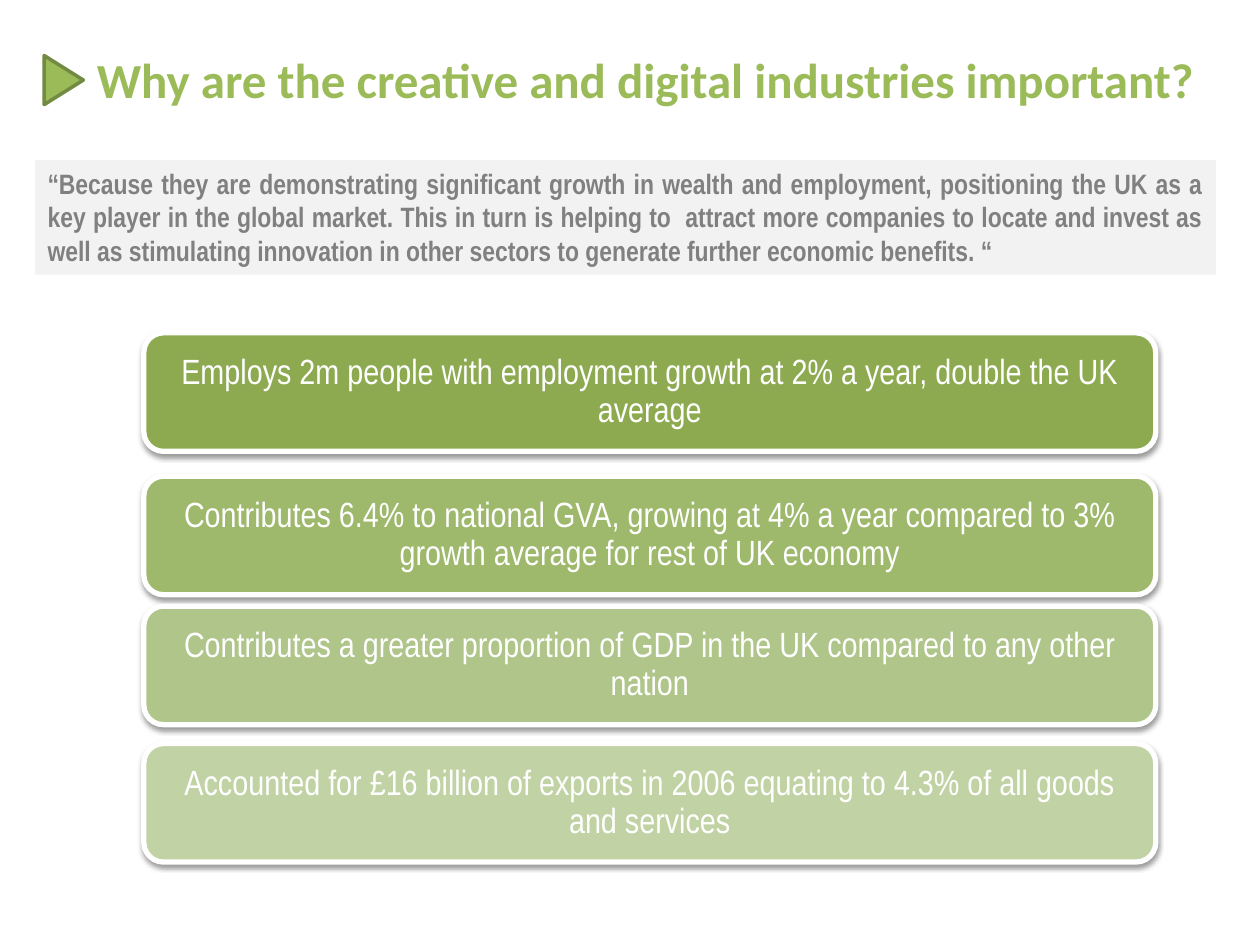
from lxml import etree
from pptx import Presentation
from pptx.dml.color import RGBColor
from pptx.enum.shapes import MSO_SHAPE
from pptx.enum.text import MSO_ANCHOR, PP_ALIGN
from pptx.oxml.ns import qn
from pptx.util import Cm, Pt

RECTANGLE = MSO_SHAPE.RECTANGLE
ROUNDED = MSO_SHAPE.ROUNDED_RECTANGLE
TRIANGLE = MSO_SHAPE.ISOSCELES_TRIANGLE
TOP, MIDDLE = MSO_ANCHOR.TOP, MSO_ANCHOR.MIDDLE
LEFT, CENTER, JUSTIFY = PP_ALIGN.LEFT, PP_ALIGN.CENTER, PP_ALIGN.JUSTIFY

QUOTE = (
    "“Because they are demonstrating significant growth in wealth and employment, "
    "positioning the UK as a key player in the global market. This in turn is helping to  "
    "attract more companies to locate and invest as well as stimulating innovation in "
    "other sectors to generate further economic benefits. “"
)
# Top edge in cm, fill, statement
REASONS = [
    (6.71, "8DAA51", "Employs 2m people with employment growth at 2% a year, "
                     "double the UK average"),
    (9.6, "9EB86C", "Contributes 6.4% to national GVA, growing at 4% a year "
                    "compared to 3% growth average for rest of UK economy"),
    (12.22, "AFC589", "Contributes a greater proportion of GDP in the UK "
                      "compared to any other nation"),
    (14.99, "C1D3A5", "Accounted for £16 billion of exports in 2006 equating "
                      "to 4.3% of all goods and services"),
]


def rgb(value):
    return RGBColor.from_string(value)


class SlideBuilder:
    accent, accent_edge = "9BBB59", "738A42"
    white, panel, grey = "FFFFFF", "F2F2F2", "808080"
    heading_font, body_font = "Calibri", "Arial Narrow"

    def __init__(self, slide):
        self.slide = slide

    def set_text(self, shape, text, font, size, color, align, anchor, bold=False):
        frame = shape.text_frame
        frame.text = text
        frame.word_wrap = True
        frame.vertical_anchor = anchor
        paragraph = frame.paragraphs[0]
        paragraph.alignment = align
        for run in paragraph.runs:
            run.font.name = font
            run.font.size = Pt(size)
            run.font.bold = bold
            run.font.color.rgb = rgb(color)
        return frame

    def title(self, text, left, top, width, height):
        heading = self.slide.shapes.title
        heading.left, heading.top = Cm(left), Cm(top)
        heading.width, heading.height = Cm(width), Cm(height)
        self.set_text(heading, text, self.heading_font, 28, self.accent, LEFT, MIDDLE, True)

    def block(self, kind, left, top, width, height, fill, edge=None, edge_width=0):
        """Add a flat preset shape, outlined only when an edge colour is given."""
        shape = self.slide.shapes.add_shape(kind, Cm(left), Cm(top), Cm(width), Cm(height))
        shape.shadow.inherit = False
        shape.fill.solid()
        shape.fill.fore_color.rgb = rgb(fill)
        if edge:
            shape.line.color.rgb = rgb(edge)
            shape.line.width = Pt(edge_width)
        else:
            shape.line.fill.background()
        return shape

    def marker(self, left, top, width, height):
        pointer = self.block(TRIANGLE, left, top, width, height,
                             self.accent, self.accent_edge, 2)
        pointer.rotation = 90

    def quote(self, text, left, top, width, height):
        panel = self.block(RECTANGLE, left, top, width, height, self.panel)
        self.set_text(panel, text, self.body_font, 16, self.grey, JUSTIFY, TOP, True)

    def card(self, text, left, top, width, height, fill):
        card = self.block(ROUNDED, left, top, width, height, fill, self.white, 3)
        self.drop_shadow(card)
        frame = self.set_text(card, text, self.body_font, 20, self.white, CENTER, MIDDLE)
        frame.margin_left = frame.margin_right = Cm(0.2)
        frame.margin_top = frame.margin_bottom = Cm(0.2)
        frame.paragraphs[0].line_spacing = 0.9

    def drop_shadow(self, shape):
        effects = shape._element.spPr.find(qn("a:effectLst"))
        shadow = etree.SubElement(effects, qn("a:outerShdw"), blurRad=str(Pt(3.1)),
                                  dist=str(Pt(1.6)), dir="5400000", rotWithShape="0")
        color = etree.SubElement(shadow, qn("a:srgbClr"), val="000000")
        etree.SubElement(color, qn("a:alpha"), val="38000")


def main():
    deck = Presentation()
    deck.slide_width, deck.slide_height = Cm(25.4), Cm(19.05)
    title_only = deck.slide_layouts[5]
    builder = SlideBuilder(deck.slides.add_slide(title_only))

    builder.title("Why are the creative and digital industries important?",
                  1.7, 0, 23.7, 3.18)
    builder.marker(0.79, 1.22, 0.99, 0.79)
    builder.quote(QUOTE, 0.71, 3.23, 23.8, 2.31)
    for top, fill, statement in REASONS:
        builder.card(statement, 2.9, top, 20.4, 2.39, fill)

    deck.save("out.pptx")


if __name__ == "__main__":
    main()
